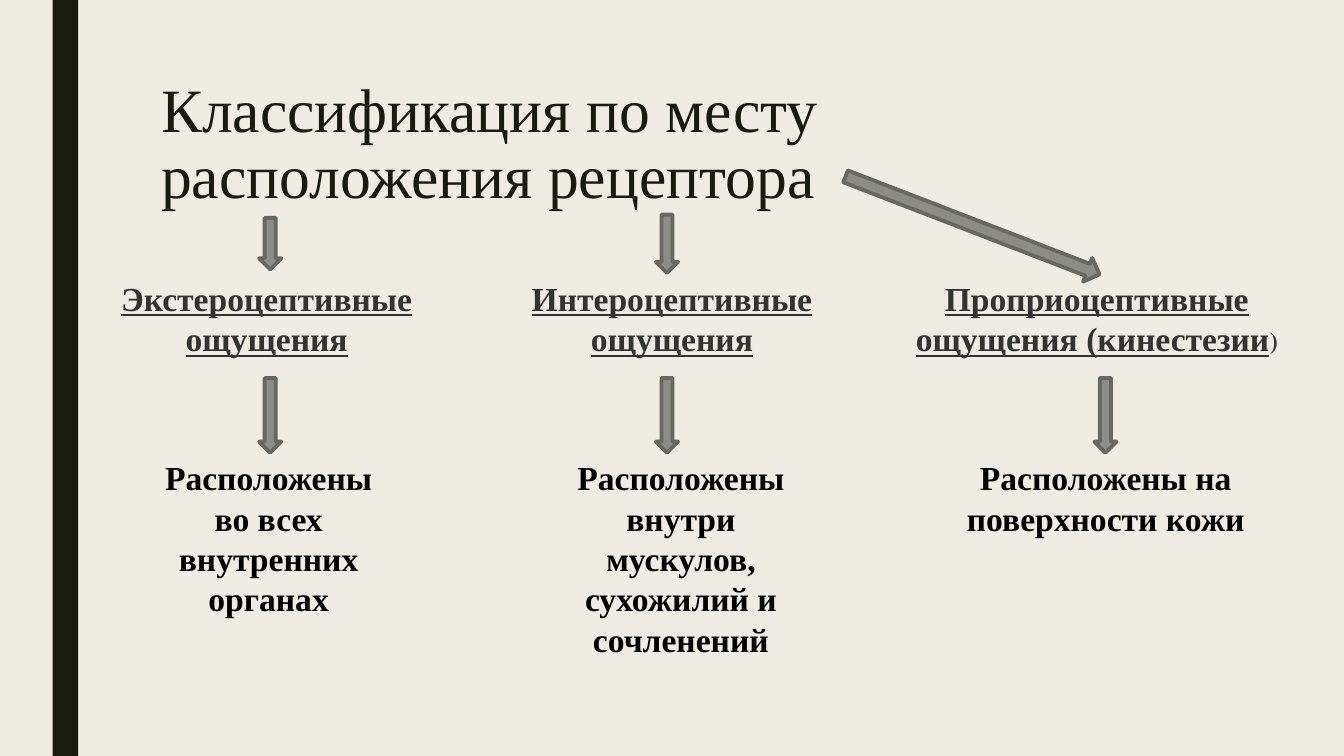
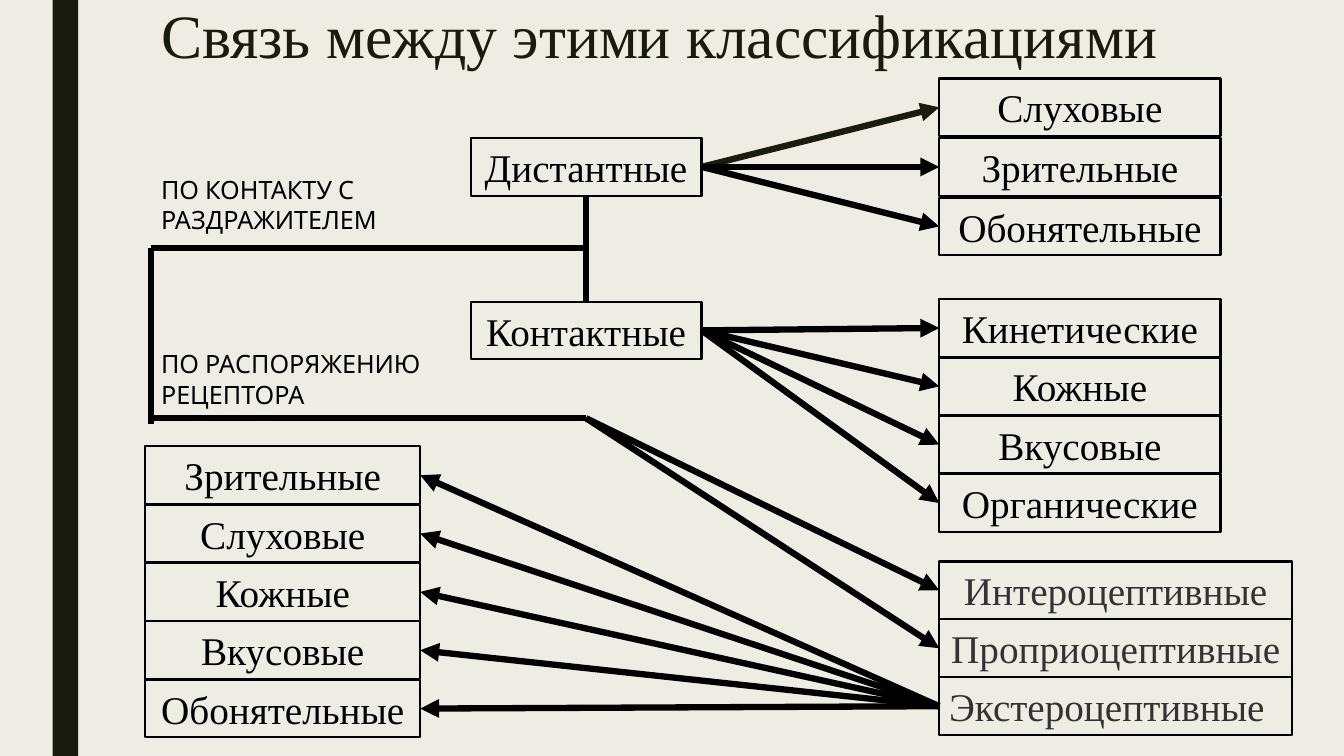
from lxml.etree import SubElement
from pptx import Presentation
from pptx.dml.color import RGBColor
from pptx.enum.shapes import MSO_CONNECTOR, MSO_SHAPE
from pptx.enum.text import MSO_ANCHOR, PP_ALIGN
from pptx.oxml.ns import qn
from pptx.util import Cm, Pt

RECT = MSO_SHAPE.RECTANGLE
DOWN_ARROW = MSO_SHAPE.DOWN_ARROW
RIGHT_ARROW = MSO_SHAPE.RIGHT_ARROW
STRAIGHT = MSO_CONNECTOR.STRAIGHT
LEFT, CENTER = PP_ALIGN.LEFT, PP_ALIGN.CENTER
MIDDLE = MSO_ANCHOR.MIDDLE

CREAM = RGBColor(0xEF, 0xED, 0xE3)
DARK = RGBColor(0x19, 0x1B, 0x0E)
BLACK = RGBColor(0, 0, 0)
CHARCOAL = RGBColor(0x33, 0x33, 0x33)
GRAY = RGBColor(0x8C, 0x8D, 0x86)
GRAY_EDGE = RGBColor(0x68, 0x68, 0x63)

SERIF, SANS, SCHOLA = "Times New Roman", "Karla", "TeX Gyre Schola"
LEFT_SITE, RIGHT_SITE = 1, 3
BOX_HEIGHT = 1.45


class Deck:
    def __init__(self):
        self.prs = Presentation()
        self.prs.slide_width, self.prs.slide_height = Cm(33.87), Cm(19.05)
        self.shapes = None

    def new_slide(self, title, title_top):
        slide = self.prs.slides.add_slide(self.prs.slide_layouts[6])
        slide.background.fill.solid()
        slide.background.fill.fore_color.rgb = CREAM
        self.shapes = slide.shapes
        self.shape(RECT, 1.33, 0, 0.64, 19.05, fill=DARK)
        heading = self.text(title, 3.81, title_top, 26, 4.1, 44, color=DARK)
        heading.line_spacing = 0.89

    def style(self, paragraph, size, font, color, align, bold=False):
        paragraph.alignment = align
        paragraph.font.size = Pt(size)
        paragraph.font.name = font
        paragraph.font.color.rgb = color
        paragraph.font.bold = bold

    def text(self, words, left, top, width, height, size, font=SERIF,
             color=BLACK, align=LEFT, bold=False):
        frame = self.shapes.add_textbox(
            Cm(left), Cm(top), Cm(width), Cm(height)).text_frame
        frame.word_wrap = True
        paragraph = frame.paragraphs[0]
        paragraph.text = words
        self.style(paragraph, size, font, color, align, bold)
        return paragraph

    def shape(self, kind, left, top, width, height, fill=None, edge=None,
              weight=1.5):
        shape = self.shapes.add_shape(
            kind, Cm(left), Cm(top), Cm(width), Cm(height))
        shape.shadow.inherit = False
        if fill is None:
            shape.fill.background()
        else:
            shape.fill.solid()
            shape.fill.fore_color.rgb = fill
        if edge is None:
            shape.line.fill.background()
        else:
            shape.line.color.rgb = edge
            shape.line.width = Pt(weight)
        return shape

    def block_arrow(self, kind, left, top, width, height, rotation=0):
        arrow = self.shape(kind, left, top, width, height, GRAY, GRAY_EDGE, 2.75)
        arrow.rotation = rotation

    def box(self, words, left, top, width, color=BLACK, align=CENTER):
        box = self.shape(RECT, left, top, width, BOX_HEIGHT, edge=BLACK)
        frame = box.text_frame
        frame.word_wrap = True
        frame.vertical_anchor = MIDDLE
        frame.paragraphs[0].text = words
        self.style(frame.paragraphs[0], 28, SERIF, color, align)
        return box

    def column(self, labels, left, top, width, step, color=BLACK):
        return [self.box(label, left, top + row * step, width, color)
                for row, label in enumerate(labels)]

    def line(self, x1, y1, x2, y2, color=BLACK, arrow=False):
        line = self.shapes.add_connector(
            STRAIGHT, Cm(x1), Cm(y1), Cm(x2), Cm(y2))
        line.line.color.rgb = color
        line.line.width = Pt(4.5)
        properties = line.element.spPr
        if arrow:
            SubElement(properties.find(qn("a:ln")), qn("a:tailEnd"),
                       type="triangle")
        SubElement(properties, qn("a:effectLst"))
        return line

    def link(self, source, source_site, target, target_site, color=BLACK):
        link = self.line(0, 0, 1, 1, color, arrow=True)
        link.begin_connect(source, source_site)
        link.end_connect(target, target_site)


def receptor_location(deck):
    deck.new_slide("Классификация по месту расположения рецептора", 1.9)
    kinds = [
        ("Экстероцептивные ощущения", 1.78, 9.88, 6.53,
         "Расположены во всех внутренних органах", 3.81, 5.92),
        ("Интероцептивные ощущения", 11.5, 10.87, 16.53,
         "Расположены внутри мускулов, сухожилий и сочленений", 14.1, 6.12),
        ("Проприоцептивные ощущения (кинестезии", 22.7, 9.88, 27.58,
         "Расположены на поверхности кожи", 23.85, 8.03),
    ]
    for name, left, width, arrow_left, place, place_left, place_width in kinds:
        heading = deck.text(name, left, 6.88, width, 2.3, 24,
                            color=CHARCOAL, align=CENTER, bold=True)
        heading.runs[0].font.underline = True
        deck.block_arrow(DOWN_ARROW, arrow_left, 9.53, 0.56, 1.88)
        deck.text(place, place_left, 11.4, place_width, 4.4, 24,
                  align=CENTER, bold=True)
    bracket = heading.add_run()
    bracket.text = ")"
    bracket.font.name = SCHOLA
    bracket.font.size = Pt(18)
    bracket.font.bold = False

    deck.block_arrow(DOWN_ARROW, 6.53, 5.49, 0.56, 1.3)
    deck.block_arrow(DOWN_ARROW, 16.53, 5.41, 0.56, 1.47)
    deck.block_arrow(RIGHT_ARROW, 21.08, 5.36, 6.86, 0.64, 21.1)


def classification_links(deck):
    deck.new_slide("Связь между этими классификациями", 0.03)
    trunk, spine, right = 14.77, 3.81, 23.67
    contact_y, receptor_y = 6.25, 10.54

    distant = deck.box("Дистантные", 11.86, 3.48, 5.82)
    contact = deck.box("Контактные", 11.86, 7.6, 5.82)
    deck.line(trunk, 3.48 + BOX_HEIGHT, trunk, 7.6)
    deck.line(trunk, contact_y, spine, contact_y)
    deck.line(trunk, receptor_y, spine, receptor_y)
    deck.line(spine, contact_y, spine, 10.69)
    deck.text("ПО КОНТАКТУ С РАЗДРАЖИТЕЛЕМ", spine, 4.27, 8.33, 1.8, 18, SANS)
    deck.text("ПО РАСПОРЯЖЕНИЮ РЕЦЕПТОРА", spine, 8.66, 7.7, 1.8, 18, SANS)

    remote_senses = deck.column(
        ["Слуховые", "Зрительные", "Обонятельные"], right, 1.98, 7.09, 1.5)
    for sense, color in zip(remote_senses, (DARK, BLACK, BLACK)):
        deck.link(distant, RIGHT_SITE, sense, LEFT_SITE, color)

    contact_senses = deck.column(
        ["Кинетические", "Кожные", "Вкусовые", "Органические"],
        right, 7.54, 7.09, 1.47)
    for sense in contact_senses:
        deck.link(contact, RIGHT_SITE, sense, LEFT_SITE)

    inner_kinds = deck.column(["Интероцептивные", "Проприоцептивные"],
                              right, 14.15, 8.89, 1.46, CHARCOAL)
    for kind in inner_kinds:
        branch = deck.line(trunk, receptor_y, right, receptor_y, arrow=True)
        branch.end_connect(kind, LEFT_SITE)

    exteroceptive = deck.box("Экстероцептивные", right, 17.07, 8.89,
                             CHARCOAL, LEFT)
    outer_senses = deck.column(
        ["Зрительные", "Слуховые", "Кожные", "Вкусовые", "Обонятельные"],
        3.66, 11.25, 6.93, 1.47)
    for sense in outer_senses:
        deck.link(exteroceptive, LEFT_SITE, sense, RIGHT_SITE)


def main():
    deck = Deck()
    receptor_location(deck)
    classification_links(deck)
    deck.prs.save("out.pptx")


if __name__ == "__main__":
    main()
